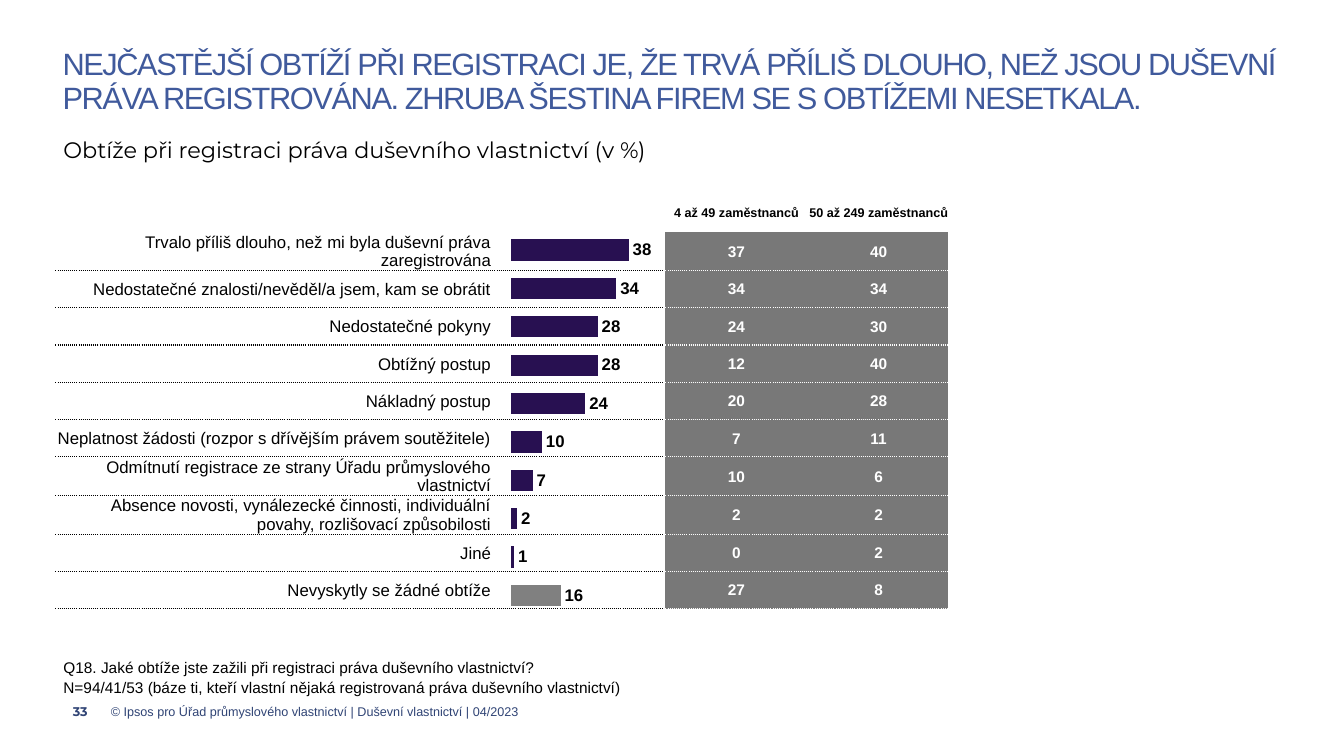
from lxml.etree import SubElement
from pptx import Presentation
from pptx.chart.data import CategoryChartData
from pptx.dml.color import RGBColor
from pptx.enum.chart import XL_CHART_TYPE, XL_LABEL_POSITION
from pptx.enum.text import MSO_ANCHOR, PP_ALIGN
from pptx.oxml import parse_xml
from pptx.oxml.ns import nsdecls, qn
from pptx.util import Inches, Pt

COLORS = {
    "title": "405A9C", "footer": "304475", "text": "000000", "white": "FFFFFF",
    "panel": "787878", "bar": "281051", "no_difficulty": "808080",
}
DIFFICULTIES = [  # label, all firms, 4 to 49 employees, 50 to 249 employees
    ("Trvalo příliš dlouho, než mi byla duševní práva zaregistrována", 38, 37, 40),
    ("Nedostatečné znalosti/nevěděl/a jsem, kam se obrátit", 34, 34, 34),
    ("Nedostatečné pokyny", 28, 24, 30),
    ("Obtížný postup", 28, 12, 40),
    ("Nákladný postup", 24, 20, 28),
    ("Neplatnost žádosti (rozpor s dřívějším právem soutěžitele)", 10, 7, 11),
    ("Odmítnutí registrace ze strany Úřadu průmyslového vlastnictví", 7, 10, 6),
    ("Absence novosti, vynálezecké činnosti, individuální povahy, "
     "rozlišovací způsobilosti", 2, 2, 2),
    ("Jiné", 1, 0, 2),
    ("Nevyskytly se žádné obtíže", 16, 27, 8),
]
COMPANY_SIZES = ("4 až 49 zaměstnanců", "50 až 249 zaměstnanců")


def color(name):
    return RGBColor.from_string(COLORS[name])


class SurveySlide:
    """Places elements on a grid whose columns and rows are a tenth of an inch."""

    font = "Arial"

    def __init__(self, presentation):
        self.slide = presentation.slides.add_slide(presentation.slide_layouts[6])

    def grid(self, *cells):
        return [Inches(cell / 10) for cell in cells]

    def style(self, font, size, color_name, bold=False, name=None):
        font.name = name or self.font
        font.size = Pt(size)
        font.bold = bold
        font.color.rgb = color(color_name)

    def text(self, place, lines, size, color_name, bold=False, font=None, inset=(0, 0.5),
             align=PP_ALIGN.LEFT, anchor=MSO_ANCHOR.TOP, spacing=None, tracking=None):
        frame = self.slide.shapes.add_textbox(*self.grid(*place)).text_frame
        frame.word_wrap = True
        frame.vertical_anchor = anchor
        frame.margin_left, frame.margin_top = self.grid(*inset)
        frame.margin_right, frame.margin_bottom = self.grid(*inset)
        for index, line in enumerate(lines):
            paragraph = frame.add_paragraph() if index else frame.paragraphs[0]
            paragraph.alignment = align
            paragraph.line_spacing = spacing
            run = paragraph.add_run()
            run.text = line
            self.style(run.font, size, color_name, bold, font)
            if tracking:
                run.font._element.set("spc", str(tracking * 100))

    def border(self, cell, side, color_name=None, width=1, dash="sysDot"):
        """Adds one cell edge; without a colour the edge is invisible."""
        line = SubElement(cell._tc.get_or_add_tcPr(), qn(f"a:ln{side}"), w=str(Pt(width)))
        if color_name is None:
            SubElement(line, qn("a:noFill"))
            return
        fill = SubElement(line, qn("a:solidFill"))
        SubElement(fill, qn("a:srgbClr"), val=COLORS[color_name])
        SubElement(line, qn("a:prstDash"), val=dash)

    def cell(self, cell, text, size, color_name, bold, align, fill, top, bottom, last):
        cell.margin_left, cell.margin_right, cell.margin_top, cell.margin_bottom = \
            self.grid(0.1, 0.1, 0.1, 0)
        cell.vertical_anchor = MSO_ANCHOR.MIDDLE
        self.border(cell, "L")
        if last:
            self.border(cell, "R", "white", 2.25, "solid")
        else:
            self.border(cell, "R")
        self.border(cell, "T", top)
        self.border(cell, "B", bottom)
        if fill:
            cell.fill.solid()
            cell.fill.fore_color.rgb = color(fill)
        else:
            cell.fill.background()
        if text:
            paragraph = cell.text_frame.paragraphs[0]
            paragraph.alignment = align
            run = paragraph.add_run()
            run.text = text
            self.style(run.font, size, color_name, bold)

    def table(self, place, widths, heights):
        rows = [("", "", *COMPANY_SIZES)]
        rows += [(label, "", str(small), str(medium))
                 for label, _, small, medium in DIFFICULTIES]
        table = self.slide.shapes.add_table(len(rows), len(widths), *self.grid(*place)).table
        table.first_row = table.horz_banding = False
        for column, width in zip(table.columns, self.grid(*widths)):
            column.width = width
        for row, height in zip(table.rows, self.grid(*heights)):
            row.height = height
        for row_index, texts in enumerate(rows):
            header = row_index == 0
            for column_index, text in enumerate(texts):
                panel = column_index > 1
                last = column_index == len(widths) - 1
                edge = "white" if panel else "text"
                fill = "panel" if panel else None
                size, text_color = (11, "white") if panel else (12, "text")
                if header:
                    size, text_color = 9, "text"
                    fill = "white" if last else None
                self.cell(
                    table.cell(row_index, column_index), text, size, text_color, panel,
                    PP_ALIGN.CENTER if panel else PP_ALIGN.RIGHT, fill,
                    edge if row_index > 1 else None, None if header else edge, last)

    def bar_chart(self, place, plot_area):
        data = CategoryChartData(number_format="#,##0")
        data.categories = [str(number + 1) for number in range(len(DIFFICULTIES))]
        data.add_series("Series 1", [row[1] for row in DIFFICULTIES])
        chart = self.slide.shapes.add_chart(
            XL_CHART_TYPE.BAR_CLUSTERED, *self.grid(*place), data).chart
        chart.has_legend = chart.has_title = False
        self.style(chart.font, 11, "text")
        chart.category_axis.reverse_order = True
        axis = chart.value_axis
        axis.minimum_scale, axis.maximum_scale, axis.major_unit = 0, 95, 20
        axis.has_major_gridlines = False
        chart.category_axis.visible = axis.visible = False

        plot = chart.plots[0]
        plot.gap_width = 80
        plot.vary_by_categories = False
        series = plot.series[0]
        no_difficulty = series.points[len(DIFFICULTIES) - 1]
        for bars, name in ((series, "bar"), (no_difficulty, "no_difficulty")):
            bars.format.fill.solid()
            bars.format.fill.fore_color.rgb = color(name)
        labels = series.data_labels
        labels.show_value = True
        labels.number_format = "#,##0"
        labels.number_format_is_linked = False
        labels.position = XL_LABEL_POSITION.OUTSIDE_END
        self.style(labels.font, 12, "text", True)
        self.chart_frame(chart, plot_area)

    def chart_frame(self, chart, plot_area):
        """Fixes the inner plot area and makes the chart background transparent."""
        area = chart._chartSpace.chart.plotArea
        for old_layout in area.findall(qn("c:layout")):
            area.remove(old_layout)
        sizes = "".join(f'<c:{tag} val="{share}"/>' for tag, share in zip("xywh", plot_area))
        area.insert(0, parse_xml(
            f'<c:layout {nsdecls("c")}><c:manualLayout><c:layoutTarget val="inner"/>'
            f'<c:xMode val="edge"/><c:yMode val="edge"/>{sizes}'
            '</c:manualLayout></c:layout>'))
        clear = (f'<c:spPr {nsdecls("c", "a")}><a:noFill/>'
                 '<a:ln><a:noFill/></a:ln></c:spPr>')
        area.append(parse_xml(clear))
        chart._chartSpace.chart.addnext(parse_xml(clear))


def main():
    presentation = Presentation()
    presentation.slide_width, presentation.slide_height = Inches(13.33), Inches(7.5)
    page = SurveySlide(presentation)
    page.table((5.5, 19.2, 88.8, 41.7), (43.3, 17.2, 14.1, 14.1),
               [3.8] + [3.7] * len(DIFFICULTIES))
    page.bar_chart((46.7, 17.7, 33.2, 43.3), (0.12, 0.12, 0.88, 0.88))
    page.text((4.4, 4.4, 124.1, 7.7),
              ["NEJČASTĚJŠÍ OBTÍŽÍ PŘI REGISTRACI JE, ŽE TRVÁ PŘÍLIŠ DLOUHO, NEŽ JSOU DUŠEVNÍ "
               "PRÁVA REGISTROVÁNA. ZHRUBA ŠESTINA FIREM SE S OBTÍŽEMI NESETKALA."],
              22, "title", inset=(1.8, 0.5), spacing=0.9, tracking=-1)
    page.text((6, 68.6, 3.9, 4), ["33"], 9, "footer", True, "Montserrat",
              align=PP_ALIGN.CENTER, anchor=MSO_ANCHOR.MIDDLE)
    page.text((6.3, 14.2, 114.4, 2.1),
              ["Obtíže při registraci práva duševního vlastnictví (v %)"],
              16, "text", font="Montserrat", inset=(0, 0), spacing=Pt(14))
    page.text((5.3, 64.7, 113.6, 4.8),
              ["Q18. Jaké obtíže jste zažili při registraci práva duševního vlastnictví?",
               "N=94/41/53 (báze ti, kteří vlastní nějaká registrovaná práva "
               "duševního vlastnictví)"],
              11, "text", inset=(1, 0.5), spacing=Pt(14))
    page.text((11, 68.6, 100.7, 4),
              ["© Ipsos pro Úřad průmyslového vlastnictví | Duševní vlastnictví | 04/2023"],
              9, "footer", anchor=MSO_ANCHOR.MIDDLE)
    presentation.save("out.pptx")


if __name__ == "__main__":
    main()
